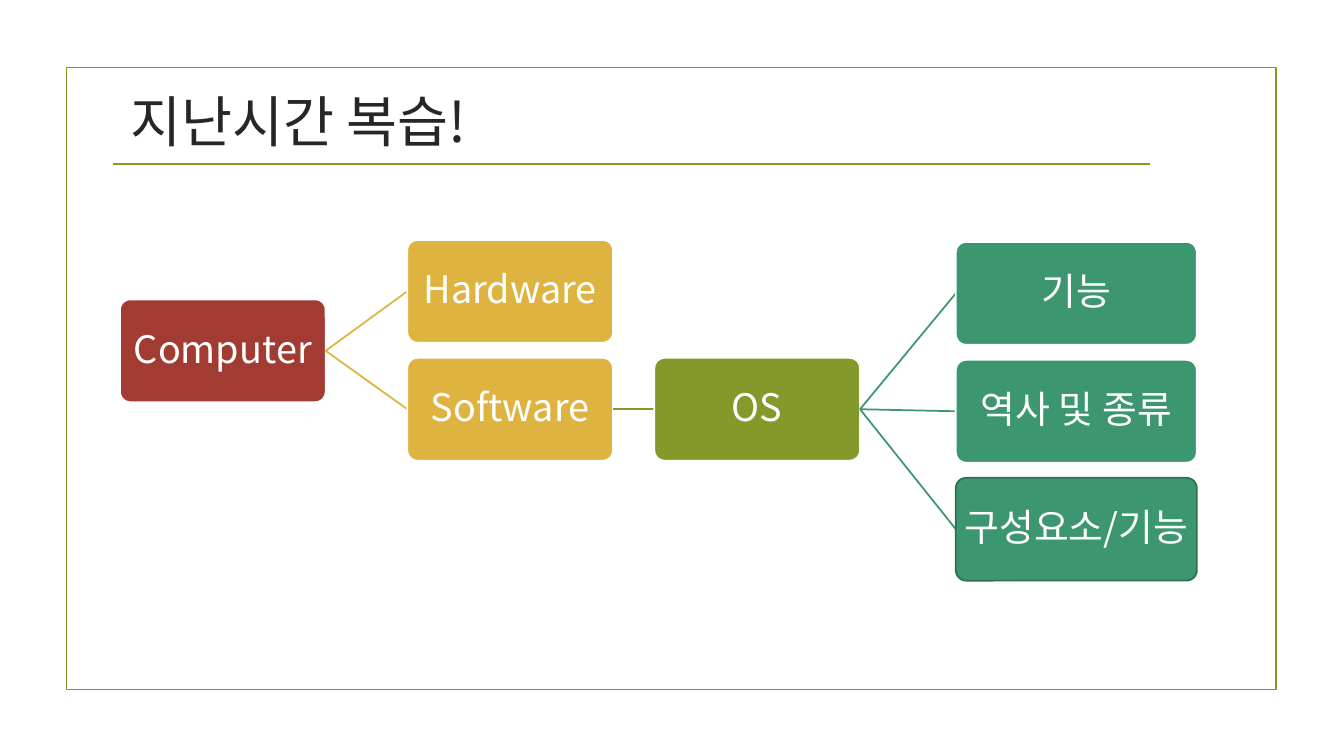
"""Build a review slide with a tree that leads from the computer to its operating system."""
from dataclasses import dataclass

from lxml import etree
from pptx import Presentation
from pptx.dml.color import RGBColor
from pptx.enum.shapes import MSO_CONNECTOR, MSO_SHAPE
from pptx.enum.text import MSO_ANCHOR, MSO_AUTO_SIZE, PP_ALIGN
from pptx.oxml.ns import qn
from pptx.util import Emu, Pt

STRAIGHT = MSO_CONNECTOR.STRAIGHT
RECTANGLE = MSO_SHAPE.RECTANGLE
ROUNDED = MSO_SHAPE.ROUNDED_RECTANGLE
MIDDLE = MSO_ANCHOR.MIDDLE
NO_AUTOFIT = MSO_AUTO_SIZE.NONE
LEFT = PP_ALIGN.LEFT
CENTER = PP_ALIGN.CENTER

EMU_PER_PX = 9144
TITLE_ONLY_LAYOUT = 5
NODE_HEIGHT = 102
NARROW, WIDE = 204, 239
ROW_STEP = 117
COMPUTER_X, PARTS_X, SYSTEM_X, TOPICS_X = 119, 404, 649, 948
COMPUTER_Y, PARTS_Y, TOPICS_Y = 297, 238, 240


@dataclass(frozen=True)
class Theme:
    font: str = "Noto Sans CJK KR"
    title_size: float = 39.6
    node_size: float = 27
    line_width: float = 1.25
    ink: str = "262626"
    white: str = "FFFFFF"
    red: str = "A23C33"
    yellow: str = "DEB340"
    olive: str = "83992A"
    green: str = "3C9770"
    dark_green: str = "2C7053"


THEME = Theme()


@dataclass(frozen=True)
class Node:
    text: str
    left: int
    top: int
    width: int
    fill: str
    parent: "Node | None" = None
    outline: str = THEME.white

    @property
    def middle(self) -> int:
        return self.top + NODE_HEIGHT // 2


def px(length: int) -> Emu:
    return Emu(length * EMU_PER_PX)


def color(value: str) -> RGBColor:
    return RGBColor.from_string(value)


def format_paragraph(paragraph, size: float, ink: str, alignment) -> None:
    paragraph.alignment = alignment
    font = paragraph.font
    font.size = Pt(size)
    font.color.rgb = color(ink)
    font.name = THEME.font
    properties = paragraph._p.pPr.find(qn("a:defRPr"))
    east_asian = etree.SubElement(properties, qn("a:ea"))
    east_asian.set("typeface", THEME.font)


def add_line(page, start: tuple[int, int], end: tuple[int, int], ink: str) -> None:
    line = page.shapes.add_connector(STRAIGHT, *map(px, start + end))
    line.line.color.rgb = color(ink)
    line.line.width = Pt(THEME.line_width)
    etree.SubElement(line._element.spPr, qn("a:effectLst"))


def add_box(page, kind, left: int, top: int, width: int, height: int, outline: str):
    box = page.shapes.add_shape(kind, px(left), px(top), px(width), px(height))
    box.shadow.inherit = False
    box.fill.background()
    box.line.color.rgb = color(outline)
    box.line.width = Pt(THEME.line_width)
    return box


def add_node(page, node: Node) -> None:
    if node.parent:
        parent = node.parent
        start = (parent.left + parent.width, parent.middle)
        add_line(page, start, (node.left, node.middle), node.fill)
    box = add_box(page, ROUNDED, node.left, node.top, node.width, NODE_HEIGHT, node.outline)
    box.adjustments[0] = 0.1
    box.fill.solid()
    box.fill.fore_color.rgb = color(node.fill)
    frame = box.text_frame
    frame.word_wrap = True
    frame.vertical_anchor = MIDDLE
    frame.margin_left = frame.margin_right = px(5)
    frame.margin_top = frame.margin_bottom = px(5)
    frame.text = node.text
    paragraph = frame.paragraphs[0]
    paragraph.line_spacing = 0.9
    format_paragraph(paragraph, THEME.node_size, THEME.white, CENTER)


def set_title(page, text: str) -> None:
    title = page.shapes.title
    title.left, title.top, title.width, title.height = map(px, (119, 87, 857, 65))
    frame = title.text_frame
    frame.word_wrap = True
    frame.auto_size = NO_AUTOFIT
    frame.vertical_anchor = MIDDLE
    frame.text = text
    format_paragraph(frame.paragraphs[0], THEME.title_size, THEME.ink, LEFT)


def build_nodes() -> list[Node]:
    computer = Node("Computer", COMPUTER_X, COMPUTER_Y, NARROW, THEME.red)
    hardware = Node("Hardware", PARTS_X, PARTS_Y, NARROW, THEME.yellow, computer)
    software = Node("Software", PARTS_X, PARTS_Y + ROW_STEP, NARROW, THEME.yellow, computer)
    system = Node("OS", SYSTEM_X, software.top, NARROW, THEME.olive, software)
    topics = [
        Node(text, TOPICS_X, TOPICS_Y + row * ROW_STEP, WIDE, THEME.green, system, outline)
        for row, (text, outline) in enumerate([
            ("기능", THEME.white),
            ("역사 및 종류", THEME.white),
            ("구성요소/기능", THEME.dark_green),
        ])
    ]
    return [computer, hardware, software, system, *topics]


def main() -> None:
    deck = Presentation()
    deck.slide_width, deck.slide_height = px(1333), px(750)
    page = deck.slides.add_slide(deck.slide_layouts[TITLE_ONLY_LAYOUT])
    add_box(page, RECTANGLE, 66, 67, 1200, 617, THEME.olive)
    add_line(page, (112, 163), (1141, 163), THEME.olive)
    set_title(page, "지난시간 복습!")
    for node in build_nodes():
        add_node(page, node)
    deck.save("out.pptx")


if __name__ == "__main__":
    main()
